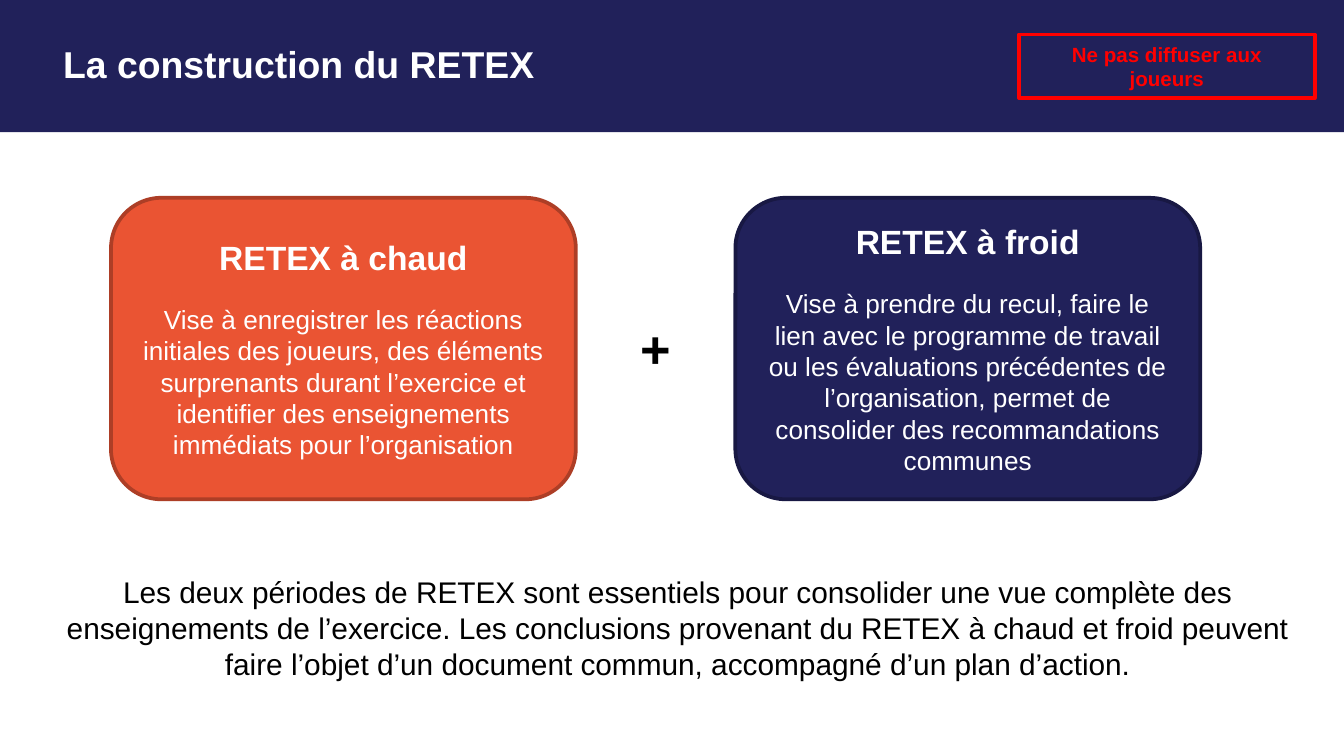
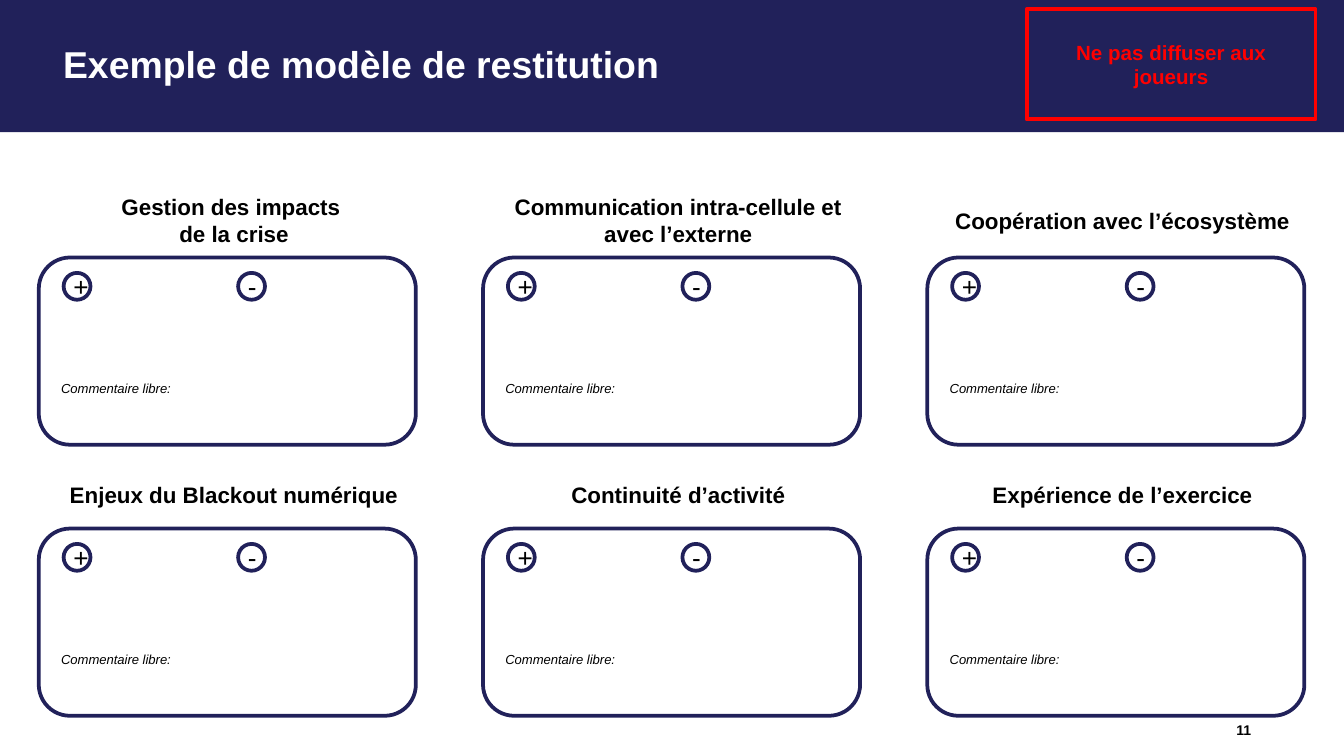
from pptx import Presentation
from pptx.dml.color import RGBColor
from pptx.enum.shapes import MSO_SHAPE
from pptx.enum.text import MSO_ANCHOR, MSO_AUTO_SIZE, PP_ALIGN
from pptx.oxml.xmlchemy import OxmlElement
from pptx.util import Pt

COLORS = {
    "navy": "21215A", "navy_edge": "181843",
    "orange": "EA5433", "orange_edge": "AD3E26",
    "red": "FF0000", "white": "FFFFFF", "black": "000000",
}
FONT = "Arial"
SLIDE_WIDTH, SLIDE_HEIGHT, BAND_HEIGHT = 720, 405, 70.8
WARNING = "Ne pas diffuser aux joueurs"

CONSTRUCTION = {
    "title": "La construction du RETEX",
    "warning_box": (545.8, 18.5, 158.6, 34),
    "periods": [
        ("RETEX à chaud",
         "Vise à enregistrer les réactions initiales des joueurs, des éléments surprenants "
         "durant l’exercice et identifier des enseignements immédiats pour l’organisation",
         "orange"),
        ("RETEX à froid",
         "Vise à prendre du recul, faire le lien avec le programme de travail ou les "
         "évaluations précédentes de l’organisation, permet de consolider des "
         "recommandations communes",
         "navy"),
    ],
    "conclusion":
        "Les deux périodes de RETEX sont essentiels pour consolider une vue complète des "
        "enseignements de l’exercice. Les conclusions provenant du RETEX à chaud et froid "
        "peuvent faire l’objet d’un document commun, accompagné d’un plan d’action.",
}
PERIOD_LEFT, PERIOD_TOP, PERIOD_WIDTH, PERIOD_HEIGHT, PERIOD_GAP = 59.5, 106, 249, 161.5, 85.5

RESTITUTION = {
    "title": "Exemple de modèle de restitution",
    "warning_box": (550, 5, 154.8, 59),
    "themes": [
        [("Gestion des impacts \nde la crise", 202),
         ("Communication intra-cellule et avec l’externe", 202),
         ("Coopération avec l’écosystème", 238)],
        [("Enjeux du Blackout numérique", 202),
         ("Continuité d’activité", 202),
         ("Expérience de l’exercice", 202)],
    ],
    "comment": "Commentaire libre:",
    "signs": [("+", 13.3), ("-", 106.8)],
    "page": "11",
}
CARD_LEFT, CARD_TOP, CARD_WIDTH, CARD_HEIGHT = 20.8, 138, 202, 100.3
COLUMN_PITCH, ROW_PITCH = 238, 145.2
HEADING_HEIGHTS = [43, 40]
SIGN_TOP, SIGN_SIZE = 8.2, 14.4


def color(name):
    return RGBColor.from_string(COLORS[name])


def place(part, box):
    part.left, part.top, part.width, part.height = map(Pt, box)


def style(paragraph, text, size, ink, bold=False, italic=False,
          align=PP_ALIGN.CENTER, indent=0):
    paragraph.text = text
    paragraph.alignment = align
    font = paragraph.font
    font.name, font.size, font.bold, font.italic = FONT, Pt(size), bold, italic
    font.color.rgb = color(ink)
    properties = paragraph._p.get_or_add_pPr()
    properties.set("marL", str(Pt(indent)))
    properties.set("indent", "0")


def write(part, text, size, ink, anchor=MSO_ANCHOR.MIDDLE, inset=None, **options):
    frame = part.text_frame
    frame.word_wrap = True
    frame.auto_size = MSO_AUTO_SIZE.NONE
    frame.vertical_anchor = anchor
    if inset is not None:
        frame.margin_left = frame.margin_top = Pt(inset)
        frame.margin_right = frame.margin_bottom = Pt(inset)
    paragraph = frame.paragraphs[0]
    style(paragraph, text, size, ink, **options)
    return paragraph


def add_box(shapes, kind, box, fill=None, edge=None):
    part = shapes.add_shape(kind, *map(Pt, box))
    part.shadow.inherit = False
    if fill:
        part.fill.solid()
        part.fill.fore_color.rgb = color(fill)
    else:
        part.fill.background()
    if edge:
        part.line.color.rgb = color(edge)
        part.line.width = Pt(2)
    else:
        part.line.fill.background()
    return part


def add_text(slide, box, text, size, ink="black", **options):
    label = slide.shapes.add_textbox(*map(Pt, box))
    return write(label, text, size, ink, **options)


def add_themed_slide(deck, layout, content):
    slide = deck.slides.add_slide(deck.slide_layouts.get_by_name(layout))
    band = add_box(slide.shapes, MSO_SHAPE.RECTANGLE,
                   (0, 0, SLIDE_WIDTH, BAND_HEIGHT), "navy")
    slide.shapes._spTree.insert(2, band._element)
    title = slide.shapes.title
    place(title, (25.2, 14.4, 510, 42.5))
    write(title, content["title"], 20, "white", bold=True,
          align=PP_ALIGN.LEFT, indent=1.4).line_spacing = 0.9
    warning = add_box(slide.shapes, MSO_SHAPE.RECTANGLE, content["warning_box"], edge="red")
    write(warning, WARNING, 11, "red", bold=True)
    return slide


def build_construction(deck):
    slide = add_themed_slide(deck, "Title Only", CONSTRUCTION)
    for index, (heading, aim, hue) in enumerate(CONSTRUCTION["periods"]):
        left = PERIOD_LEFT + index * (PERIOD_WIDTH + PERIOD_GAP)
        period = add_box(slide.shapes, MSO_SHAPE.ROUNDED_RECTANGLE,
                         (left, PERIOD_TOP, PERIOD_WIDTH, PERIOD_HEIGHT), hue, hue + "_edge")
        write(period, heading, 18, "white", bold=True).space_after = Pt(14)
        style(period.text_frame.add_paragraph(), aim, 14, "white")
    add_text(slide, (PERIOD_LEFT + PERIOD_WIDTH, 165.8, PERIOD_GAP, 41), "+", 28, bold=True)
    add_text(slide, (28, 307.5, 663, 70.5), CONSTRUCTION["conclusion"], 16,
             anchor=MSO_ANCHOR.TOP, inset=0, indent=7.2).space_after = Pt(5)


def add_card(slide, left, top):
    shapes = slide.shapes.add_group_shape().shapes
    card = add_box(shapes, MSO_SHAPE.ROUNDED_RECTANGLE,
                   (left, top, CARD_WIDTH, CARD_HEIGHT), "white", "navy")
    write(card, RESTITUTION["comment"], 7, "black", anchor=MSO_ANCHOR.TOP,
          italic=True, align=PP_ALIGN.LEFT)
    card.text_frame.margin_top = Pt(61)
    for sign, offset in RESTITUTION["signs"]:
        badge = add_box(shapes, MSO_SHAPE.OVAL,
                        (left + offset, top + SIGN_TOP, SIGN_SIZE, SIGN_SIZE), "white", "navy")
        write(badge, sign, 14, "black")


def build_restitution(deck):
    slide = add_themed_slide(deck, "Title and Content", RESTITUTION)
    body = slide.placeholders[1]
    for row, themes in enumerate(RESTITUTION["themes"]):
        top = CARD_TOP + row * ROW_PITCH
        height = HEADING_HEIGHTS[row]
        for column, (theme, width) in enumerate(themes):
            left = CARD_LEFT + column * COLUMN_PITCH
            box = (left + (CARD_WIDTH - width) / 2, top + 1.5 - height, width, height)
            options = {"inset": 0, "bold": True, "indent": 7.2}
            if row == column == 0:
                place(body, box)
                heading = write(body, theme, 12, "black", **options)
                heading.space_before = Pt(0)
                heading._p.get_or_add_pPr().insert_element_before(
                    OxmlElement("a:buNone"), "a:tabLst", "a:defRPr", "a:extLst")
            else:
                add_text(slide, box, theme, 12, **options)
            add_card(slide, left, top)
    add_text(slide, (563.8, 376.8, 106.5, 28), RESTITUTION["page"], 7.5,
             inset=0, bold=True, align=PP_ALIGN.RIGHT)


def main():
    deck = Presentation()
    deck.slide_width, deck.slide_height = Pt(SLIDE_WIDTH), Pt(SLIDE_HEIGHT)
    build_construction(deck)
    build_restitution(deck)
    deck.save("out.pptx")


if __name__ == "__main__":
    main()
